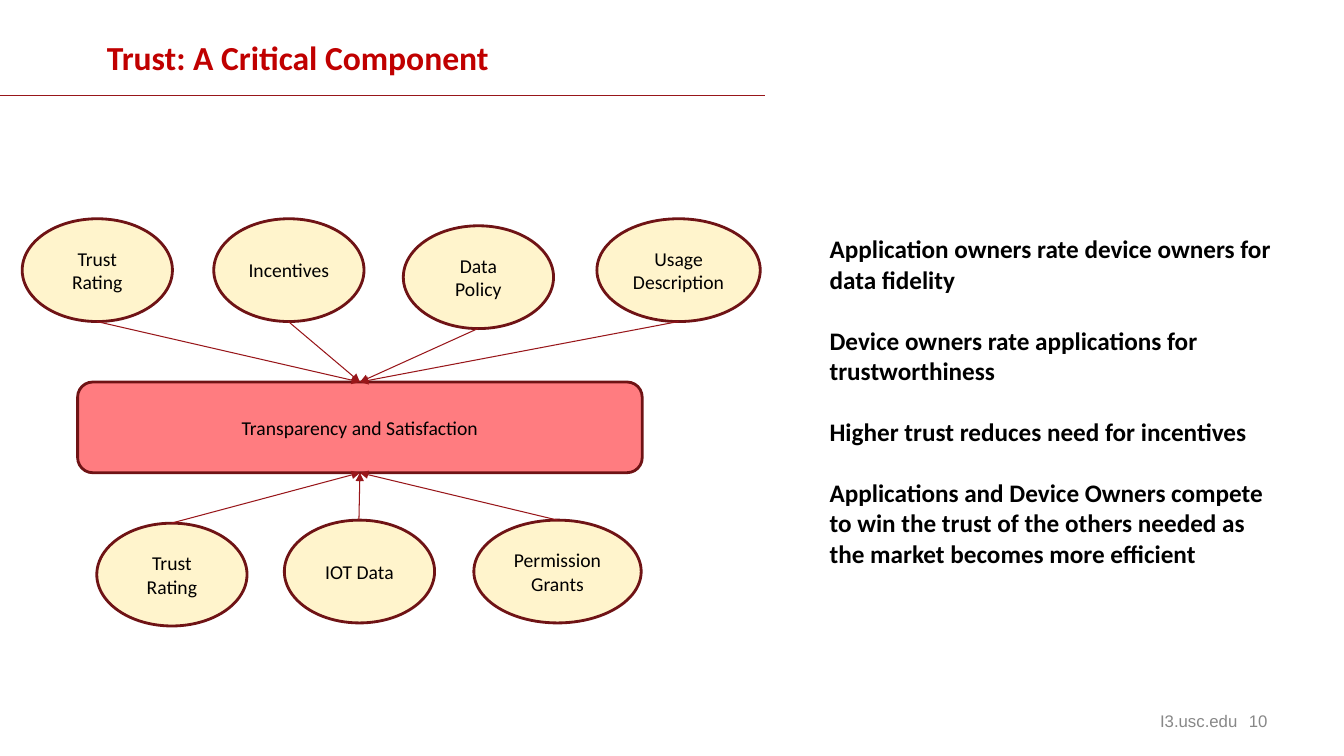
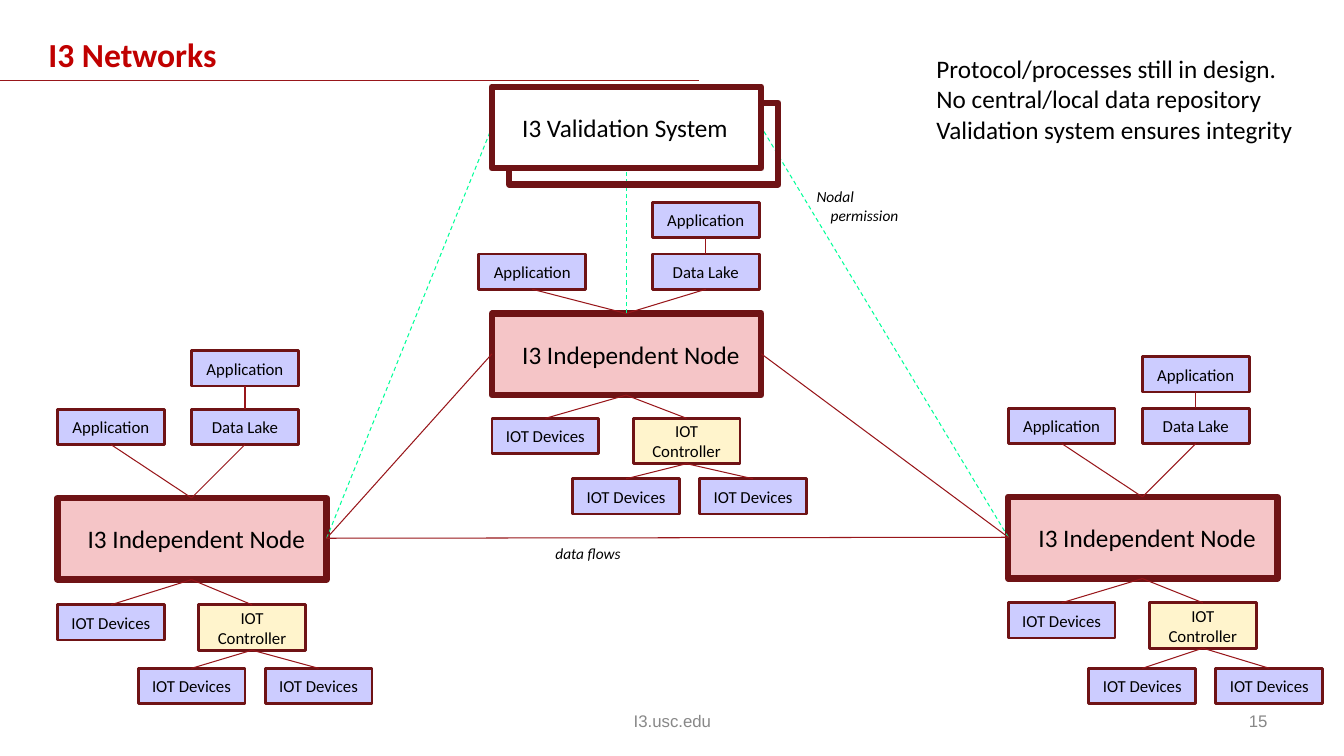
from dataclasses import dataclass, replace
from typing import Optional

import lxml.etree
import pptx
import pptx.dml.color
import pptx.enum.dml
import pptx.enum.shapes
import pptx.enum.text
import pptx.oxml.ns
import pptx.util

EMU_PER_PX = 9144
TITLE_RED = "C00000"
DARK_RED = "6F1315"
LINE_RED = "98161A"
PERMISSION_GREEN = "00FF99"
CREAM = "FFF4CC"
LILAC = "CCCCFF"
PINK = "F5C5C7"
CORAL = "FF7C80"
WHITE = "FFFFFF"

ALIGN = pptx.enum.text.PP_ALIGN
ANCHOR = pptx.enum.text.MSO_ANCHOR
KIND = pptx.enum.shapes.MSO_SHAPE
Point = tuple[int, int]


@dataclass(frozen=True)
class Box:
    left: int
    top: int
    width: int
    height: int

    @property
    def centre(self) -> int:
        return self.left + self.width // 2

    @property
    def middle(self) -> int:
        return self.top + self.height // 2

    @property
    def top_point(self) -> Point:
        return self.centre, self.top

    @property
    def bottom_point(self) -> Point:
        return self.centre, self.top + self.height

    @property
    def left_point(self) -> Point:
        return self.left, self.middle

    @property
    def right_point(self) -> Point:
        return self.left + self.width, self.middle


@dataclass(frozen=True)
class TextStyle:
    size: int
    colour: str = "000000"
    font: str = "Calibri"
    bold: bool = False
    italic: bool = False
    align: ALIGN = ALIGN.LEFT
    gap: int = 0


@dataclass(frozen=True)
class Look:
    kind: KIND
    fill: Optional[str]
    text: TextStyle
    line_width: float = 2
    inset: int = 10


@dataclass(frozen=True)
class Oval:
    label: str
    box: Box


@dataclass(frozen=True)
class Cluster:
    node: Box
    app_left: int
    lake_left: int
    upper_top: int
    store_top: int
    device_top: int
    leaf_top: int


TITLE = TextStyle(24, TITLE_RED, bold=True)
FOOTER = TextStyle(12, "888888", "Arial", align=ALIGN.CENTER)
PAGE_NUMBER = replace(FOOTER, align=ALIGN.RIGHT)
BODY = TextStyle(18)
CLAIM = TextStyle(18, bold=True, gap=22)
NOTE = TextStyle(11, italic=True)
LABEL = TextStyle(14, align=ALIGN.CENTER)
SMALL_LABEL = TextStyle(12, align=ALIGN.CENTER)

FACTOR = Look(KIND.OVAL, CREAM, LABEL)
OUTCOME = Look(KIND.ROUNDED_RECTANGLE, CORAL, LABEL)
PART = Look(KIND.RECTANGLE, LILAC, SMALL_LABEL)
CONTROLLER = replace(PART, fill=CREAM)
NODE = Look(KIND.RECTANGLE, PINK, BODY, 4.5, 30)
VALIDATION = replace(NODE, fill=WHITE)
VALIDATION_BACK = replace(NODE, fill=None)

OUTCOME_BOX = Box(77, 379, 560, 90)
UPPER_FACTORS = (
    Oval("Trust Rating", Box(22, 217, 149, 102)),
    Oval("Incentives", Box(212, 217, 149, 102)),
    Oval("Data Policy", Box(400, 224, 149, 102)),
    Oval("Usage Description", Box(592, 217, 162, 102)),
)
LOWER_FACTORS = (
    Oval("Trust Rating", Box(96, 519, 149, 102)),
    Oval("IOT Data", Box(282, 516, 149, 102)),
    Oval("Permission Grants", Box(470, 516, 166, 102)),
)
CLAIMS = (
    "Application owners rate device owners for data fidelity",
    "Device owners rate applications for trustworthiness",
    "Higher trust reduces need for incentives",
    "Applications and Device Owners compete to win the trust of the others "
    "needed as the market becomes more efficient",
)

NODE_SIZE = (267, 81)
LEFT_CLUSTER = Cluster(Box(57, 494, *NODE_SIZE), 57, 190, 348, 406, 600, 663)
RIGHT_CLUSTER = Cluster(Box(1000, 493, *NODE_SIZE), 1000, 1133, 354, 405, 598, 663)
MIDDLE_CLUSTER = Cluster(Box(488, 311, *NODE_SIZE), 475, 647, 201, 252, 415, 475)
VALIDATION_BOX = Box(488, 86, *NODE_SIZE)


def px(length: int) -> int:
    return pptx.util.Emu(length * EMU_PER_PX)


def colour(value: str) -> pptx.dml.color.RGBColor:
    return pptx.dml.color.RGBColor.from_string(value)


def place(box: Box) -> tuple[int, ...]:
    return px(box.left), px(box.top), px(box.width), px(box.height)


def write_text(frame, lines: tuple[str, ...], style: TextStyle) -> None:
    frame.word_wrap = True
    for index, line in enumerate(lines):
        para = frame.paragraphs[0] if index == 0 else frame.add_paragraph()
        para.text = line
        para.alignment = style.align
        if index and style.gap:
            para.space_before = pptx.util.Pt(style.gap)
        para.font.name = style.font
        para.font.size = pptx.util.Pt(style.size)
        para.font.bold = style.bold
        para.font.italic = style.italic
        para.font.color.rgb = colour(style.colour)


def add_text(page, box: Box, lines: tuple[str, ...], style: TextStyle,
             anchor: ANCHOR = ANCHOR.TOP):
    frame = page.shapes.add_textbox(*place(box)).text_frame
    frame.vertical_anchor = anchor
    write_text(frame, lines, style)
    return frame


def add_block(page, box: Box, look: Look, label: str = "") -> None:
    shape = page.shapes.add_shape(look.kind, *place(box))
    shape.shadow.inherit = False
    if look.fill:
        shape.fill.solid()
        shape.fill.fore_color.rgb = colour(look.fill)
    else:
        shape.fill.background()
    shape.line.color.rgb = colour(DARK_RED)
    shape.line.width = pptx.util.Pt(look.line_width)
    if label:
        frame = shape.text_frame
        frame.vertical_anchor = ANCHOR.MIDDLE
        frame.margin_left = px(look.inset)
        write_text(frame, (label,), look.text)


def add_line(page, start: Point, end: Point, stroke: str = LINE_RED,
             dashed: bool = False, arrow: bool = False) -> None:
    connector = page.shapes.add_connector(
        pptx.enum.shapes.MSO_CONNECTOR.STRAIGHT, *map(px, start + end))
    connector.line.color.rgb = colour(stroke)
    connector.line.width = pptx.util.Pt(0.75)
    if dashed:
        connector.line.dash_style = pptx.enum.dml.MSO_LINE.DASH
    name = pptx.oxml.ns.qn
    properties = connector._element.spPr
    if arrow:
        lxml.etree.SubElement(properties.find(name("a:ln")), name("a:tailEnd"),
                              type="triangle")
    lxml.etree.SubElement(properties, name("a:effectLst"))


def add_page(deck, title: str, title_box: Box, rule_end: Point,
             footer_box: Box, number: int):
    page = deck.slides.add_slide(deck.slide_layouts[5])
    heading = page.shapes.title
    heading.left, heading.top, heading.width, heading.height = place(title_box)
    heading.text_frame.vertical_anchor = ANCHOR.MIDDLE
    heading.text_frame.auto_size = pptx.enum.text.MSO_AUTO_SIZE.NONE
    write_text(heading.text_frame, (title,), TITLE)
    add_line(page, (0, rule_end[1]), rule_end)
    add_text(page, footer_box, ("I3.usc.edu",), FOOTER, ANCHOR.MIDDLE)
    add_text(page, Box(956, 695, 311, 40), (str(number),), PAGE_NUMBER, ANCHOR.MIDDLE)
    return page


def add_cluster(page, cluster: Cluster) -> None:
    node = cluster.node
    size = (106, 35)
    application = Box(cluster.app_left, cluster.store_top, *size)
    lake = Box(cluster.lake_left, cluster.store_top, *size)
    upper_application = Box(cluster.lake_left, cluster.upper_top, *size)
    device = Box(node.left, cluster.device_top, *size)
    controller = Box(node.left + 140, cluster.device_top, 106, 45)
    leaves = [Box(node.left + shift, cluster.leaf_top, *size) for shift in (80, 206)]

    add_block(page, node, NODE, "I3 Independent Node")
    for box in (application, upper_application):
        add_block(page, box, PART, "Application")
    add_block(page, lake, PART, "Data Lake")
    add_block(page, controller, CONTROLLER, "IOT Controller")
    for box in (device, *leaves):
        add_block(page, box, PART, "IOT Devices")

    links = [(upper_application, lake), (application, node), (lake, node),
             (node, device), (node, controller)]
    links += [(controller, leaf) for leaf in leaves]
    for upper, lower in links:
        add_line(page, upper.bottom_point, lower.top_point)


def build_trust(deck) -> None:
    page = add_page(deck, "Trust: A Critical Component", Box(96, 20, 862, 73),
                    (759, 95), Box(1045, 695, 288, 40), 10)
    add_block(page, OUTCOME_BOX, OUTCOME, "Transparency and Satisfaction")
    for oval in UPPER_FACTORS + LOWER_FACTORS:
        add_block(page, oval.box, FACTOR, oval.label)
    for oval in UPPER_FACTORS:
        add_line(page, oval.box.bottom_point, OUTCOME_BOX.top_point, arrow=True)
    for oval in LOWER_FACTORS:
        add_line(page, oval.box.top_point, OUTCOME_BOX.bottom_point, arrow=True)
    add_text(page, Box(813, 227, 460, 343), CLAIMS, CLAIM)


def build_networks(deck) -> None:
    page = add_page(deck, "I3 Networks", Box(38, 27, 1200, 54),
                    (693, 80), Box(456, 695, 422, 40), 15)
    for cluster in (LEFT_CLUSTER, RIGHT_CLUSTER, MIDDLE_CLUSTER):
        add_cluster(page, cluster)

    left, middle, right = LEFT_CLUSTER.node, MIDDLE_CLUSTER.node, RIGHT_CLUSTER.node
    for start, end in (
        (left.right_point, VALIDATION_BOX.left_point),
        (middle.top_point, VALIDATION_BOX.bottom_point),
        (right.left_point, VALIDATION_BOX.right_point),
    ):
        add_line(page, start, end, PERMISSION_GREEN, dashed=True)
    for start, end in (
        (left.right_point, right.left_point),
        (left.right_point, middle.left_point),
        (right.left_point, middle.right_point),
    ):
        add_line(page, start, end)

    add_text(page, Box(541, 535, 85, 29), ("data flows",), NOTE)
    permission = add_text(page, Box(800, 181, 102, 47), ("Nodal", "permission"), NOTE)
    permission.paragraphs[1]._p.get_or_add_pPr().set("marL", str(px(14)))
    add_text(page, Box(919, 48, 377, 131), (
        "Protocol/processes still in design.",
        "No central/local data repository",
        "Validation system ensures integrity",
    ), BODY)
    add_block(page, Box(505, 102, *NODE_SIZE), VALIDATION_BACK)
    add_block(page, VALIDATION_BOX, VALIDATION, "I3 Validation System")


def main() -> None:
    deck = pptx.Presentation()
    deck.slide_width, deck.slide_height = px(1333), px(750)
    build_trust(deck)
    build_networks(deck)
    deck.save("out.pptx")


if __name__ == "__main__":
    main()
